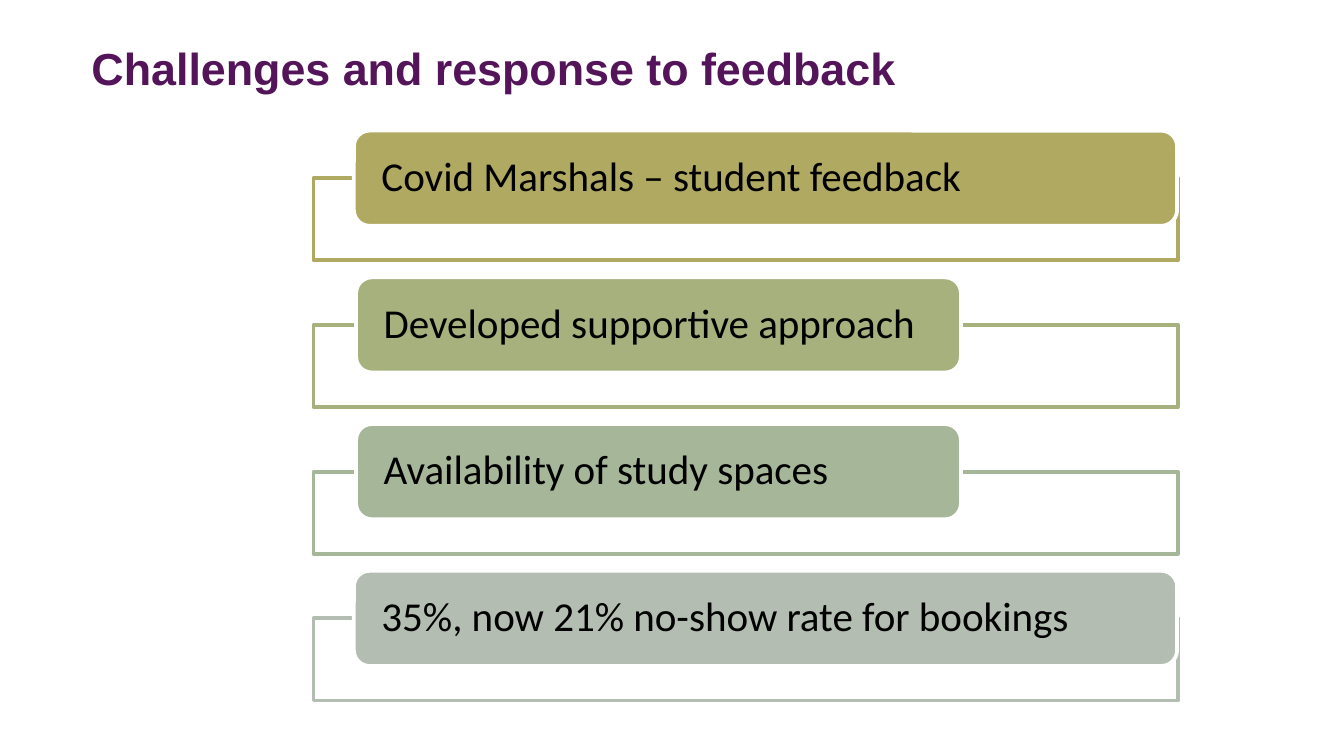
import dataclasses

import lxml.etree
import pptx
import pptx.dml.color
import pptx.enum.shapes
import pptx.enum.text
import pptx.oxml.ns
import pptx.util

Pt = pptx.util.Pt
RGB = pptx.dml.color.RGBColor.from_string
SHAPE = pptx.enum.shapes.MSO_SHAPE
ANCHOR = pptx.enum.text.MSO_ANCHOR


@dataclasses.dataclass(frozen=True)
class Theme:
    title_color: str = "54145A"
    text_color: str = "000000"
    white: str = "FFFFFF"
    rows: tuple = ("AFA961", "A6B17E", "A6B699", "B3BDB1")
    title_font: str = "Arial"
    body_font: str = "Calibri"
    title_size: int = 24
    body_size: int = 22
    line_width: int = 2


def write(tf, text, *, font, size, color, bold=False, anchor=ANCHOR.TOP,
          inset=0, spacing=1.0):
    tf.word_wrap = True
    tf.auto_size = pptx.enum.text.MSO_AUTO_SIZE.NONE
    tf.vertical_anchor = anchor
    tf.margin_left = tf.margin_right = Pt(inset)
    tf.margin_top = tf.margin_bottom = 0
    p = tf.paragraphs[0]
    p.alignment = pptx.enum.text.PP_ALIGN.LEFT
    p.line_spacing = spacing
    r = p.add_run()
    r.text = text
    r.font.name = font
    r.font.size = Pt(size)
    r.font.bold = bold
    r.font.color.rgb = RGB(color)


class Deck:
    def __init__(self, prs, theme):
        self.theme = theme
        self.s = prs.slides.add_slide(prs.slide_layouts[5])

    def title(self, text, x, y, w, h):
        sp = self.s.shapes.title
        sp.left, sp.top, sp.width, sp.height = Pt(x), Pt(y), Pt(w), Pt(h)
        write(sp.text_frame, text, font=self.theme.title_font,
              size=self.theme.title_size, color=self.theme.title_color, bold=True)

    def shape(self, kind, x, y, w, h, fill, line):
        sp = self.s.shapes.add_shape(kind, Pt(x), Pt(y), Pt(w), Pt(h))
        sp.shadow.inherit = False
        sp.fill.solid()
        sp.fill.fore_color.rgb = RGB(fill)
        sp.line.color.rgb = RGB(line)
        sp.line.width = Pt(self.theme.line_width)
        return sp

    def frame(self, x, y, w, h, color):
        sp = self.shape(SHAPE.RECTANGLE, x, y, w, h, self.theme.white, color)
        qn = pptx.oxml.ns.qn
        clr = sp.fill._xPr.find(qn("a:solidFill")).find(qn("a:srgbClr"))
        lxml.etree.SubElement(clr, qn("a:alpha")).set("val", "90000")

    def label(self, text, x, y, w, h, color):
        sp = self.shape(SHAPE.ROUNDED_RECTANGLE, x, y, w, h, color, self.theme.white)
        write(sp.text_frame, text, font=self.theme.body_font,
              size=self.theme.body_size, color=self.theme.text_color,
              anchor=ANCHOR.MIDDLE, inset=12.3, spacing=0.9)


def main():
    prs = pptx.Presentation()
    prs.slide_width, prs.slide_height = Pt(720), Pt(405)
    theme = Theme()
    deck = Deck(prs, theme)
    deck.title("Challenges and response to feedback", 49, 21.6, 622, 67.7)

    wide, narrow = (189.6, 441), (190.8, 324)
    items = (
        ("Covid Marshals – student feedback", wide),
        ("Developed supportive approach", narrow),
        ("Availability of study spaces", narrow),
        ("35%, now 21% no-show rate for bookings", wide),
    )
    top, pitch, label_h, frame_h = 70, 78.6, 51, 44
    for i, ((text, (x, w)), color) in enumerate(zip(items, theme.rows)):
        y = top + i * pitch
        deck.frame(168, y + label_h / 2, 463, frame_h, color)
        deck.label(text, x, y, w, label_h, color)

    prs.save("out.pptx")


if __name__ == "__main__":
    main()
